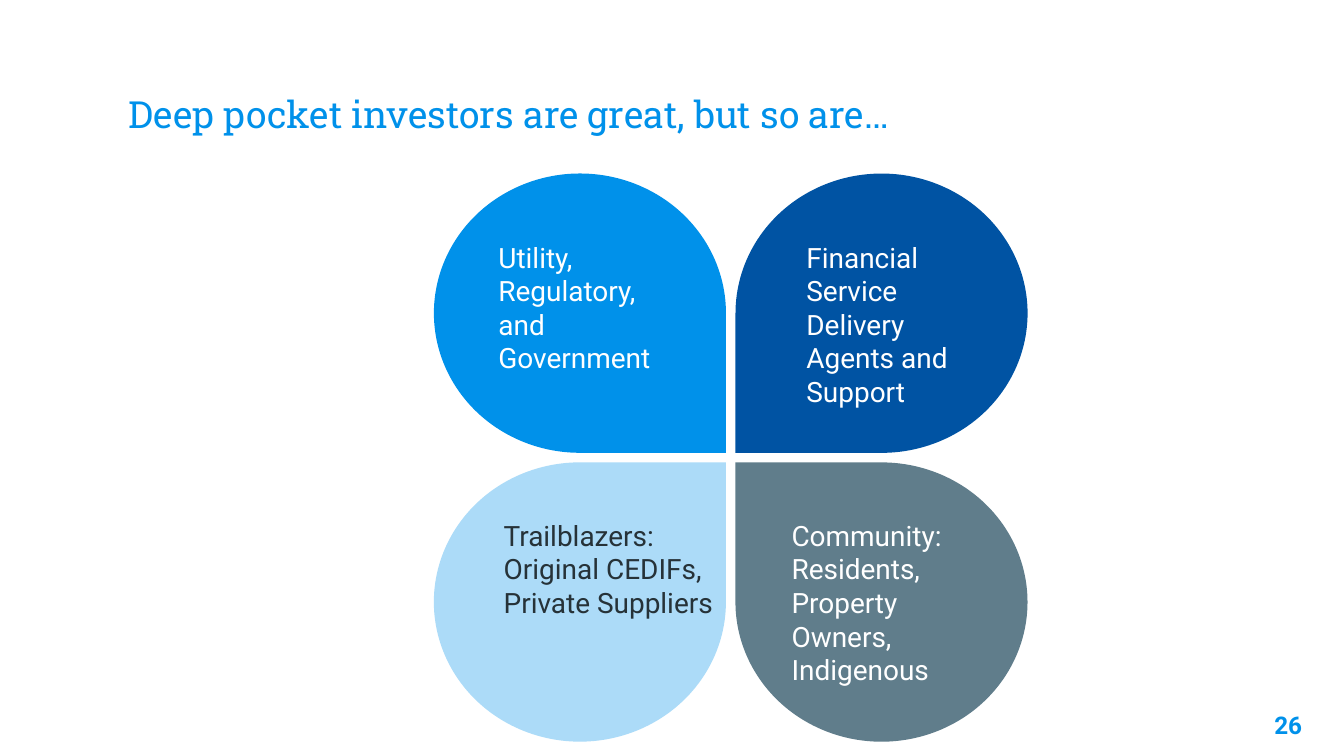
from dataclasses import dataclass
from typing import Optional

from pptx import Presentation
from pptx.dml.color import RGBColor
from pptx.enum.shapes import MSO_SHAPE
from pptx.enum.text import MSO_ANCHOR, MSO_AUTO_SIZE, PP_ALIGN
from pptx.slide import Slide
from pptx.text.text import TextFrame
from pptx.util import Cm, Pt


@dataclass(frozen=True)
class Theme:
    heading_font: str = "Roboto Slab"
    body_font: str = "Roboto"
    title_size: int = 20
    label_size: int = 15
    number_size: int = 13
    blue: str = "0091EA"
    navy: str = "0053A3"
    pale: str = "ACDBF8"
    slate: str = "607D8B"
    white: str = "FFFFFF"
    dark: str = "263238"


@dataclass(frozen=True)
class Box:
    left: float
    top: float
    width: float
    height: float

    def lengths(self) -> tuple:
        return Cm(self.left), Cm(self.top), Cm(self.width), Cm(self.height)


@dataclass(frozen=True)
class Petal:
    column: int
    row: int
    rotation: int  # turns the tip towards the centre of the flower
    fill: str
    text: str
    text_color: str
    text_box: Box


THEME = Theme()

# Flower grid, in centimetres
FLOWER_LEFT, FLOWER_TOP = 8.2, 3.28
PETAL_WIDTH, PETAL_HEIGHT = 5.52, 5.28
GAP = 0.18

PETALS = [
    Petal(0, 0, 90, THEME.blue, "Utility, Regulatory, and Government",
          THEME.white, Box(9.17, 4.29, 4.09, 2.82)),
    Petal(1, 0, 180, THEME.navy, "Financial Service Delivery Agents and Support",
          THEME.white, Box(14.99, 4.29, 4.09, 2.82)),
    Petal(1, 1, 270, THEME.slate, "Community: Residents, Property Owners, Indigenous",
          THEME.white, Box(14.71, 9.55, 4.09, 2.82)),
    Petal(0, 1, 0, THEME.pale, "Trailblazers:\nOriginal CEDIFs, Private Suppliers",
          THEME.dark, Box(9.27, 9.55, 4.65, 2.82)),
]


def write_text(text_frame: TextFrame, text: str, font: str, size: int, color: str,
               bold: bool = False, align: Optional[PP_ALIGN] = PP_ALIGN.LEFT) -> None:
    text_frame.text = text
    text_frame.word_wrap = True
    text_frame.auto_size = MSO_AUTO_SIZE.NONE
    text_frame.margin_left = text_frame.margin_right = Cm(0.25)
    text_frame.margin_top = text_frame.margin_bottom = Cm(0.25)
    for paragraph in text_frame.paragraphs:
        paragraph.alignment = align
        for run in paragraph.runs:
            run.font.name = font
            run.font.size = Pt(size)
            run.font.bold = bold
            run.font.color.rgb = RGBColor.from_string(color)


def add_title(slide: Slide, text: str, box: Box) -> None:
    title = slide.shapes.title
    title.left, title.top, title.width, title.height = box.lengths()
    write_text(title.text_frame, text, THEME.heading_font, THEME.title_size, THEME.blue)
    title.text_frame.vertical_anchor = MSO_ANCHOR.BOTTOM


def add_petal(slide: Slide, petal: Petal) -> None:
    center_x = FLOWER_LEFT + PETAL_WIDTH / 2 + petal.column * (PETAL_WIDTH + GAP)
    center_y = FLOWER_TOP + PETAL_HEIGHT / 2 + petal.row * (PETAL_HEIGHT + GAP)
    # A quarter turn swaps the sides of the unrotated box
    width, height = PETAL_WIDTH, PETAL_HEIGHT
    if petal.rotation % 180:
        width, height = height, width
    box = Box(center_x - width / 2, center_y - height / 2, width, height)
    shape = slide.shapes.add_shape(MSO_SHAPE.TEAR, *box.lengths())
    shape.rotation = petal.rotation
    shape.shadow.inherit = False
    shape.fill.solid()
    shape.fill.fore_color.rgb = RGBColor.from_string(petal.fill)
    shape.line.fill.background()


def add_label(slide: Slide, petal: Petal) -> None:
    label = slide.shapes.add_textbox(*petal.text_box.lengths())
    write_text(label.text_frame, petal.text, THEME.body_font, THEME.label_size,
               petal.text_color)


def main() -> None:
    presentation = Presentation()
    presentation.slide_width, presentation.slide_height = Cm(25.4), Cm(14.29)
    slide = presentation.slides.add_slide(presentation.slide_layouts[5])

    # Title and page number
    add_title(slide, "Deep pocket investors are great, but so are…",
              Box(2.18, 0.86, 21.03, 1.96))
    number = slide.shapes.add_textbox(*Box(23.34, 13.18, 1.52, 1.09).lengths())
    write_text(number.text_frame, "26", THEME.body_font, THEME.number_size,
               THEME.blue, bold=True, align=PP_ALIGN.RIGHT)

    # Petals first, labels on top
    for petal in PETALS:
        add_petal(slide, petal)
    for petal in PETALS:
        add_label(slide, petal)

    presentation.save("out.pptx")


if __name__ == "__main__":
    main()
